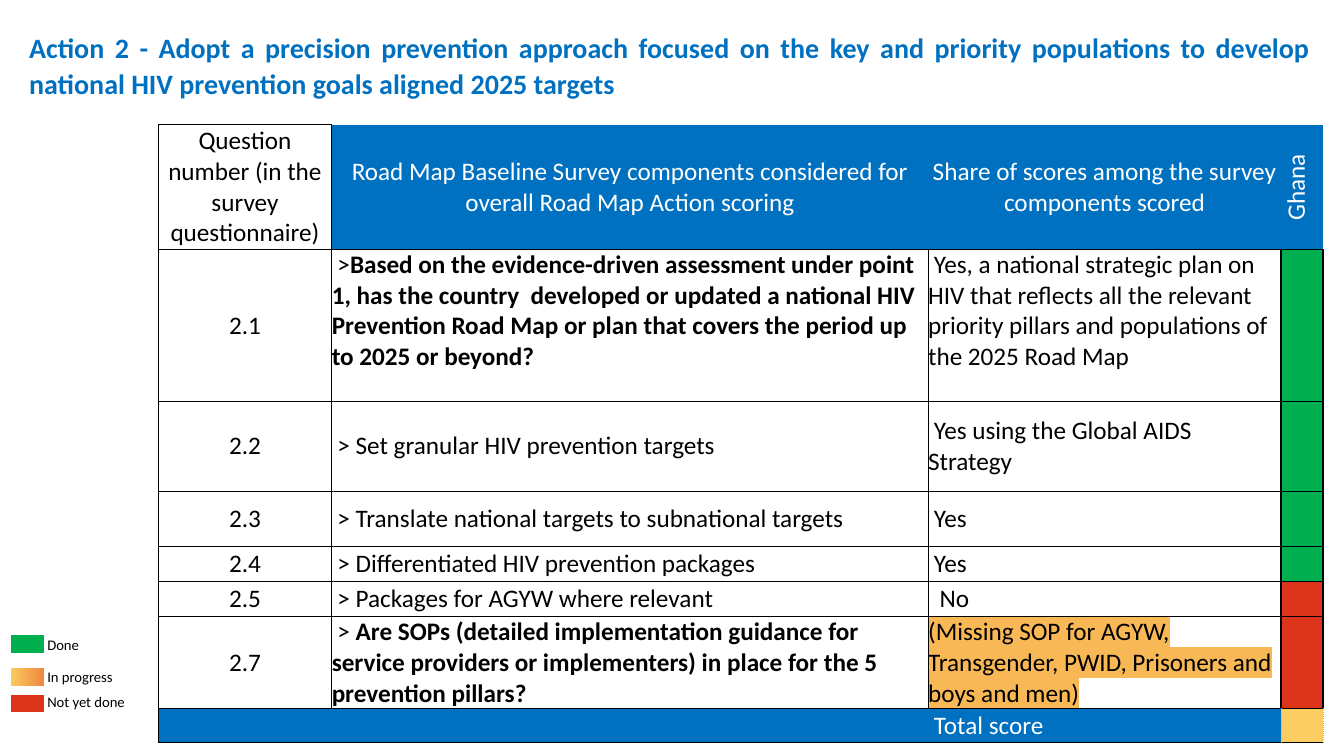
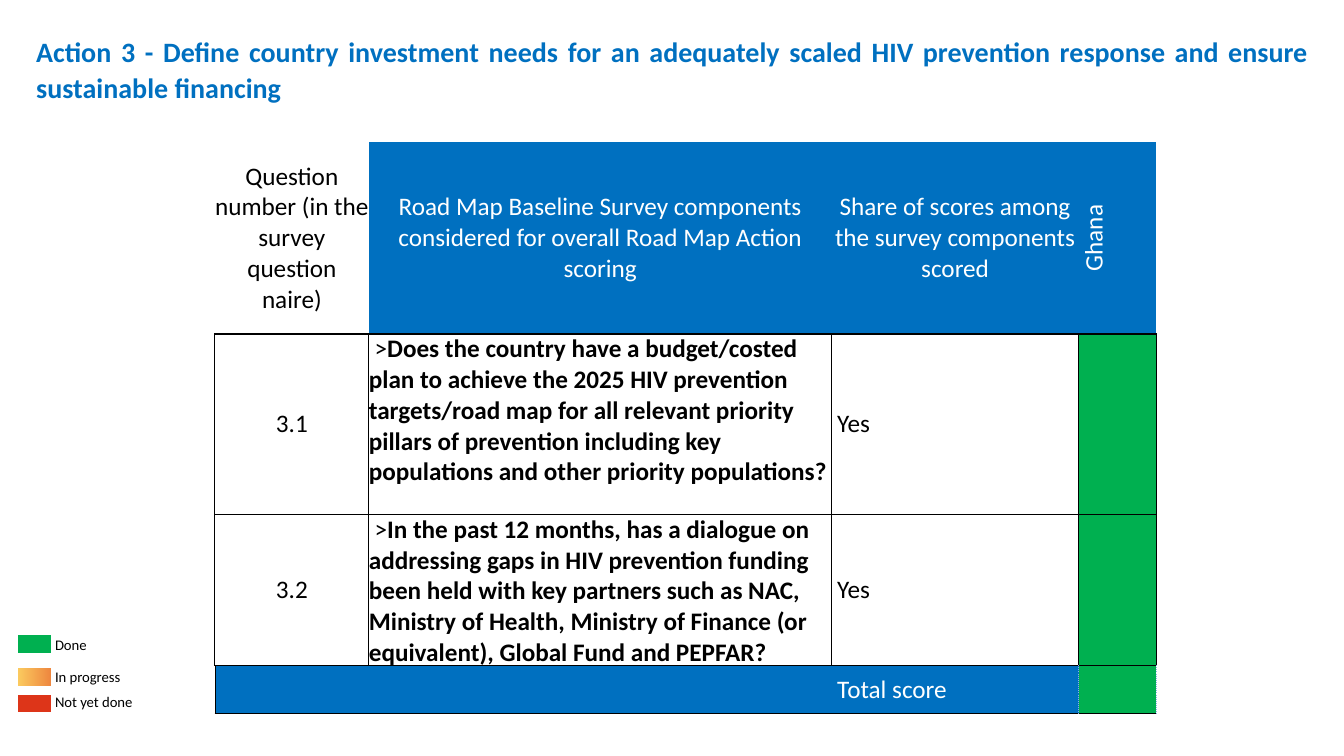
from lxml import etree
from pptx import Presentation
from pptx.dml.color import RGBColor
from pptx.enum import text
from pptx.oxml import ns
from pptx.util import Pt

BLUE, GREEN, RED, AMBER = "0070C0", "00B050", "DD3519", "FCCD60"
ORANGE, DOTS, BLACK, WHITE = "F8B856", "8DB4E2", "000000", "FFFFFF"
FONT = "Calibri"
NO_STYLE = "{2D5ABB26-0587-4C30-8999-92F81FD0307C}"
CENTER, JUSTIFY = text.PP_ALIGN.CENTER, text.PP_ALIGN.JUSTIFY
TOP, MIDDLE = text.MSO_ANCHOR.TOP, text.MSO_ANCHOR.MIDDLE
SOLID, THIN, DOTTED = (BLACK, 1, "solid"), (BLACK, 0.5, "solid"), (DOTS, 0.5, "sysDot")
GRID = dict.fromkeys("LRTB", SOLID)
HEADINGS = ["Road Map Baseline Survey components considered for overall Road Map Action scoring",
            "Share of scores among the survey components scored", "Ghana"]

# Label, swatch colours, swatch top, label top, label width
LEGEND = [("Done", [GREEN], 453.6, 450.7, 49),
          ("In progress", ["FBCA5F", "EE873F"], 477.4, 473.8, 68),
          ("Not yet done", [RED], 496.1, 491, 76)]

# Rows hold number, lead-in, question, bold, answer, highlight, score colour
SLIDES = [
    dict(title="Action 2 - Adopt a precision prevention approach focused on the key and priority "
               "populations to develop national HIV prevention goals aligned 2025 targets",
         title_at=(13.7, 16.6, 929, 58), legend_left=7.5, table_at=(113, 89.2),
         cols=[124, 426, 252, 30], heights=[89, 108.5, 64.3, 39.5, 25, 25, 65.7, 24.5],
         corner=["Question number (in the survey questionnaire)"], corner_lines=GRID, total=AMBER,
         rows=[
             ("2.1", " >", "Based on the evidence-driven assessment under point 1, has the country  "
              "developed or updated a national HIV Prevention Road Map or plan that covers the "
              "period up to 2025 or beyond?", True,
              " Yes, a national strategic plan on HIV that reflects all the relevant priority "
              "pillars and populations of the 2025 Road Map", None, GREEN),
             ("2.2", " > ", "Set granular HIV prevention targets", False,
              " Yes using the Global AIDS Strategy", None, GREEN),
             ("2.3", " > ", "Translate national targets to subnational targets", False,
              " Yes", None, GREEN),
             ("2.4", " > ", "Differentiated HIV prevention packages", False, " Yes", None, GREEN),
             ("2.5", " > ", "Packages for AGYW where relevant", False, "  No", None, RED),
             ("2.7", " > ", "Are SOPs (detailed implementation guidance for service providers or "
              "implementers) in place for the 5 prevention pillars?", True,
              "(Missing SOP for AGYW, Transgender, PWID, Prisoners and boys and men)", ORANGE, RED),
         ]),
    dict(title="Action 3 - Define country investment needs for an adequately scaled HIV prevention "
               "response and ensure sustainable financing",
         title_at=(18.7, 19.4, 923, 58), legend_left=13, table_at=(153.5, 101.5),
         cols=[110, 330.5, 176.5, 55.5], heights=[137, 129, 108, 34],
         corner=["Question number (in the survey question", "naire)"],
         corner_lines={"B": SOLID}, total=GREEN,
         rows=[
             ("3.1", " >", "Does the country have a budget/costed plan to achieve the 2025 HIV "
              "prevention targets/road map for all relevant priority pillars of prevention "
              "including key populations and other priority populations?", True,
              " Yes", None, GREEN),
             ("3.2", " >", "In the past 12 months, has a dialogue on addressing gaps in HIV "
              "prevention funding been held with key partners such as NAC, Ministry of Health, "
              "Ministry of Finance (or equivalent), Global Fund and PEPFAR?", True,
              " Yes", None, GREEN),
         ]),
]


def rgb(value):
    return RGBColor.from_string(value)


def style_cell(cell, paragraphs=(), fill=None, lines=None, color=BLACK, align=None, size=18):
    """Fill one cell; a paragraph is a list of (text, bold, highlight) runs."""
    cell.margin_left = cell.margin_right = cell.margin_top = cell.margin_bottom = 0
    cell.vertical_anchor = MIDDLE
    tcPr = cell._tc.get_or_add_tcPr()
    for side in "LRTB":
        if side in (lines or {}):
            line_color, width, dash = lines[side]
            ln = etree.SubElement(tcPr, ns.qn("a:ln" + side), w=str(Pt(width)))
            solid = etree.SubElement(ln, ns.qn("a:solidFill"))
            etree.SubElement(solid, ns.qn("a:srgbClr"), val=line_color)
            etree.SubElement(ln, ns.qn("a:prstDash"), val=dash)
    if fill and len(fill) == 2:
        cell.fill.gradient()
        cell.fill.gradient_angle = 0
        for stop, value in zip(cell.fill.gradient_stops, fill):
            stop.color.rgb = rgb(value)
    elif fill:
        cell.fill.solid()
        cell.fill.fore_color.rgb = rgb(fill[0])
    else:
        cell.fill.background()
    tf = cell.text_frame
    for i, runs in enumerate(paragraphs or [[]]):
        p = tf.add_paragraph() if i else tf.paragraphs[0]
        p.alignment = align
        p.font.name, p.font.size, p.font.color.rgb = FONT, Pt(size), rgb(color)
        for content, bold, highlight in runs:
            r = p.add_run()
            r.text, r.font.bold = content, bold
            if highlight:
                mark = etree.SubElement(r._r.get_or_add_rPr(), ns.qn("a:highlight"))
                etree.SubElement(mark, ns.qn("a:srgbClr"), val=highlight)
        if not runs:
            p._p.get_or_add_endParaRPr().set("sz", str(size * 100))


prs = Presentation()
prs.slide_width, prs.slide_height = Pt(960), Pt(540)

for data in SLIDES:
    s = prs.slides.add_slide(prs.slide_layouts[6])
    left = data["legend_left"]

    # Title and legend labels
    boxes = [(data["title"], data["title_at"], 20, BLUE, True)]
    boxes += [(label, (left + 19.2, top, width, 20.5), 10.5, BLACK, False)
              for label, _, _, top, width in LEGEND]
    for content, place, size, color, is_title in boxes:
        tf = s.shapes.add_textbox(*map(Pt, place)).text_frame
        tf.word_wrap = True
        p = tf.paragraphs[0]
        p.text = content
        p.font.name, p.font.size, p.font.bold = FONT, Pt(size), is_title
        p.font.color.rgb = rgb(color)
        if is_title:
            p.alignment, p.line_spacing, p.space_after = JUSTIFY, 1.07, Pt(8)

    # Empty tables: the score table, then one cell per legend swatch
    grids = [(data["table_at"], data["cols"], data["heights"])]
    grids += [((left, top), [23.6], [12.6]) for _, _, top, _, _ in LEGEND]
    tables = []
    for (x, y), cols, heights in grids:
        table = s.shapes.add_table(len(heights), len(cols), Pt(x), Pt(y),
                                   Pt(sum(cols)), Pt(sum(heights))).table
        table.first_row = table.horz_banding = False
        table._tbl.tblPr.find(ns.qn("a:tableStyleId")).text = NO_STYLE
        for column, width in zip(table.columns, cols):
            column.width = Pt(width)
        for row, height in zip(table.rows, heights):
            row.height = Pt(height)
        tables.append(table)
    scores, *swatches = tables
    for swatch, (_, colors, *_) in zip(swatches, LEGEND):
        style_cell(swatch.cell(0, 0), fill=colors, size=8)

    # Header row
    style_cell(scores.cell(0, 0), [[(t, False, None)] for t in data["corner"]],
               lines=data["corner_lines"], align=CENTER)
    for c, heading in enumerate(HEADINGS, 1):
        style_cell(scores.cell(0, c), [[(heading, False, None)]], [BLUE], {"B": SOLID},
                   WHITE, CENTER)
    scores.cell(0, 3)._tc.tcPr.set("vert", "vert270")

    # Question rows; long texts start at the top of their cell
    for n, (number, lead, question, bold, answer, mark, score) in enumerate(data["rows"], 1):
        style_cell(scores.cell(n, 0), [[(number, False, None)]], lines=GRID, align=CENTER)
        style_cell(scores.cell(n, 1), [[(lead, False, None), (question, bold, None)]], lines=GRID)
        style_cell(scores.cell(n, 2), [[(answer, False, mark)]], lines=GRID)
        style_cell(scores.cell(n, 3), fill=[score], lines=GRID)
        for c, content in ((1, question), (2, answer)):
            if len(content) > 100:
                scores.cell(n, c).vertical_anchor = TOP

    # Total row
    last = len(data["rows"]) + 1
    edges = {"T": SOLID, "B": THIN}
    style_cell(scores.cell(last, 0), fill=[BLUE], lines={**edges, "L": THIN})
    style_cell(scores.cell(last, 1), fill=[BLUE], lines=edges)
    style_cell(scores.cell(last, 2), [[(" Total score", False, None)]], [BLUE],
               {**edges, "R": DOTTED}, WHITE)
    style_cell(scores.cell(last, 3), fill=[data["total"]],
               lines={**edges, "L": DOTTED, "R": DOTTED})

prs.save("out.pptx")
